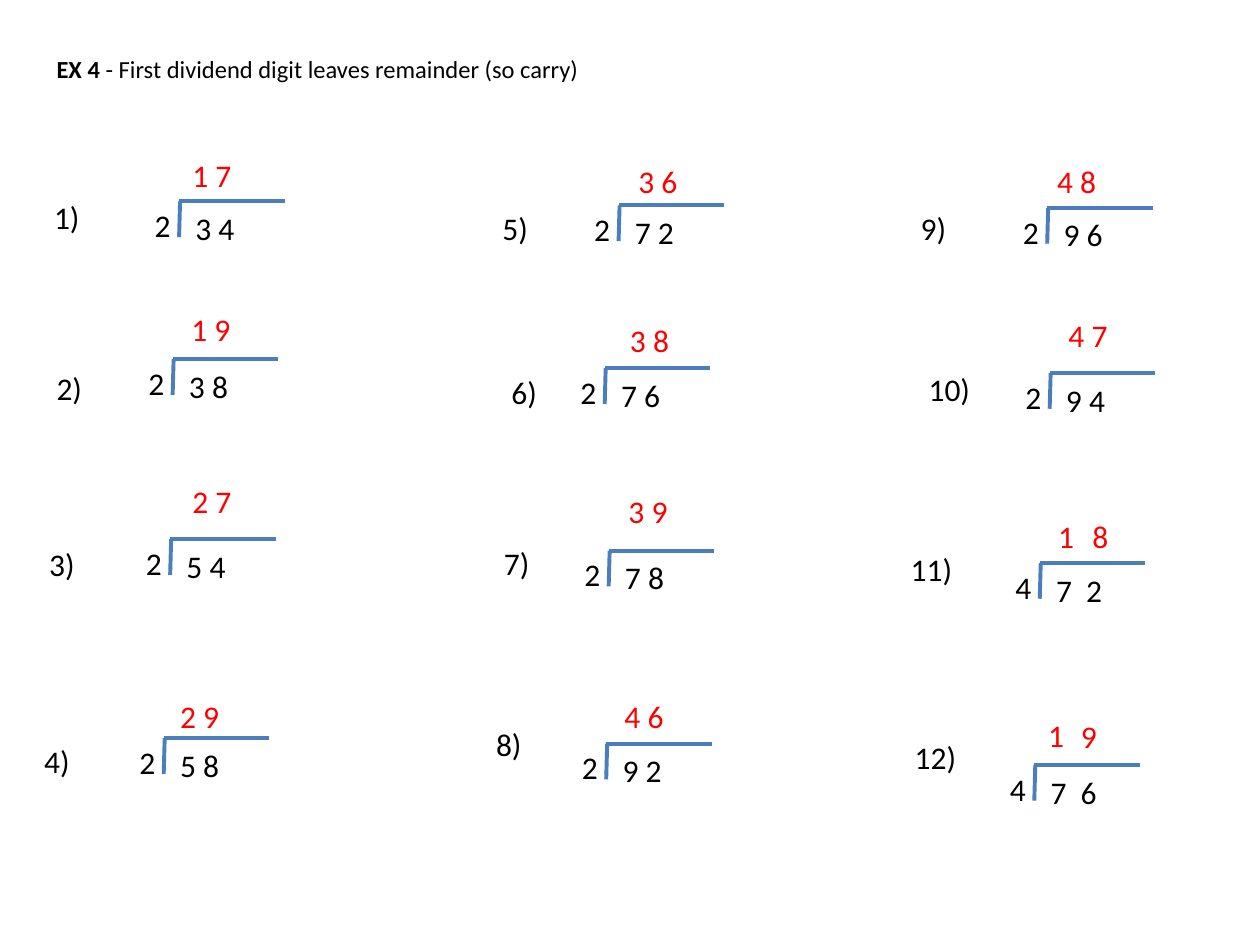
from dataclasses import dataclass

from lxml.etree import SubElement
from pptx import Presentation
from pptx.dml.color import RGBColor
from pptx.enum.shapes import MSO_CONNECTOR as Connector
from pptx.enum.text import MSO_AUTO_SIZE as AutoSize
from pptx.oxml.ns import qn
from pptx.shapes.shapetree import GroupShapes, SlideShapes
from pptx.util import Cm, Pt

BLACK = RGBColor(0x00, 0x00, 0x00)
RED = RGBColor(0xFF, 0x00, 0x00)
BLUE = RGBColor(0x4B, 0x7E, 0xBC)

Shapes = SlideShapes | GroupShapes
Point = tuple[float, float]

LINE_HEIGHT = 1.02
DIGIT_WIDTH = 0.84
PAIR_WIDTH = 1.32
WIDE_PAIR_WIDTH = 1.45
BAR_LENGTH = 2.13
HOOK_HEIGHT = 0.72


@dataclass(frozen=True)
class Span:
    text: str
    bold: bool = False


@dataclass(frozen=True)
class Answer:
    text: str
    at: Point


@dataclass(frozen=True)
class Division:
    label_at: Point
    corner: Point
    divisor: str
    dividend: str
    answers: tuple[Answer, ...]
    digit_spacing: float = 0


DIVISIONS = (
    Division((0.84, 3.86), (3.61, 4.06), "2", "3 4", (Answer("1 7", (3.63, 3.02)),)),
    Division((0.89, 7.32), (3.48, 7.24), "2", "3 8", (Answer("1 9", (3.61, 6.12)),)),
    Division((0.74, 10.87), (3.43, 10.87), "2", "5 4", (Answer("2 7", (3.63, 9.6)),)),
    Division((0.64, 14.83), (3.3, 14.88), "2", "5 8", (Answer("2 9", (3.38, 13.92)),)),
    Division((9.88, 4.09), (12.47, 4.14), "2", "7 2", (Answer("3 6", (12.62, 3.15)),)),
    Division((10.06, 7.39), (12.19, 7.42), "2", "7 6", (Answer("3 8", (12.45, 6.35)),)),
    Division((9.91, 10.85), (12.27, 11.1), "2", "7 8", (Answer("3 9", (12.42, 9.8)),)),
    Division((9.75, 14.5), (12.22, 14.99), "2", "9 2", (Answer("4 6", (12.34, 13.92)),)),
    Division((18.31, 4.09), (21.11, 4.19), "2", "9 6", (Answer("4 8", (21.06, 3.15)),)),
    Division((18.47, 7.34), (21.16, 7.52), "2", "9 4", (Answer("4 7", (21.29, 6.25)),)),
    Division((18.11, 10.97), (20.96, 11.35), "4", "7 2",
             (Answer("1", (21.08, 10.29)), Answer("8", (21.77, 10.29))), 2),
    Division((18.19, 14.76), (20.85, 15.42), "4", "7 6",
             (Answer("1", (20.88, 14.3)), Answer("9", (21.54, 14.33))), 2),
)


def add_text(shapes: Shapes, spans: tuple[Span, ...], at: Point, width: float,
             height: float = LINE_HEIGHT, size: float = 18, color: RGBColor = BLACK,
             wrap: bool = False, spacing: float = 0) -> None:
    box = shapes.add_textbox(Cm(at[0]), Cm(at[1]), Cm(width), Cm(height))
    frame = box.text_frame
    frame.word_wrap = wrap
    frame.auto_size = AutoSize.SHAPE_TO_FIT_TEXT
    para = frame.paragraphs[0]
    for part in spans:
        span = para.add_run()
        span.text = part.text
        font_format = {"name": "Calibri", "size": Pt(size), "bold": part.bold}
        for name, value in font_format.items():
            setattr(span.font, name, value)
        span.font.color.rgb = color
        if spacing:
            span._r.get_or_add_rPr().set("spc", str(round(spacing * 100)))


def add_line(shapes: Shapes, start: Point, end: Point) -> None:
    line = shapes.add_connector(
        Connector.STRAIGHT, Cm(start[0]), Cm(start[1]), Cm(end[0]), Cm(end[1]))
    line.line.color.rgb = BLUE
    line.line.width = Pt(2.25)
    SubElement(line._element.spPr, qn("a:effectLst"))


def add_bracket(shapes: Shapes, division: Division) -> None:
    group = shapes.add_group_shape().shapes
    left, top = division.corner
    add_line(group, (left, top + HOOK_HEIGHT), (left + 0.02, top))
    add_line(group, (left + BAR_LENGTH, top), (left, top))
    add_text(group, (Span(division.dividend),), (left + 0.08, top + 0.03),
             WIDE_PAIR_WIDTH if division.digit_spacing else PAIR_WIDTH,
             spacing=division.digit_spacing)
    add_text(group, (Span(division.divisor),), (left - 0.74, top - 0.03), DIGIT_WIDTH)


def add_division(shapes: Shapes, number: int, division: Division) -> None:
    add_bracket(shapes, division)
    add_text(shapes, (Span(f"{number})"),), division.label_at,
             1.07 if number < 10 else 1.5, wrap=True)
    for answer in division.answers:
        width = DIGIT_WIDTH if len(answer.text) == 1 else WIDE_PAIR_WIDTH
        add_text(shapes, (Span(answer.text),), answer.at, width, color=RED, wrap=True)


def main() -> None:
    deck = Presentation()
    deck.slide_width, deck.slide_height = Cm(25.4), Cm(19.05)
    page = deck.slides.add_slide(deck.slide_layouts[6])
    for number, division in enumerate(DIVISIONS, start=1):
        add_division(page.shapes, number, division)
    title = (Span("EX 4 ", bold=True),
             Span("- First dividend digit leaves remainder (so carry)"))
    add_text(page.shapes, title, (0.89, 0.97), 11.18, height=0.86, size=14)
    deck.save("out.pptx")


if __name__ == "__main__":
    main()
